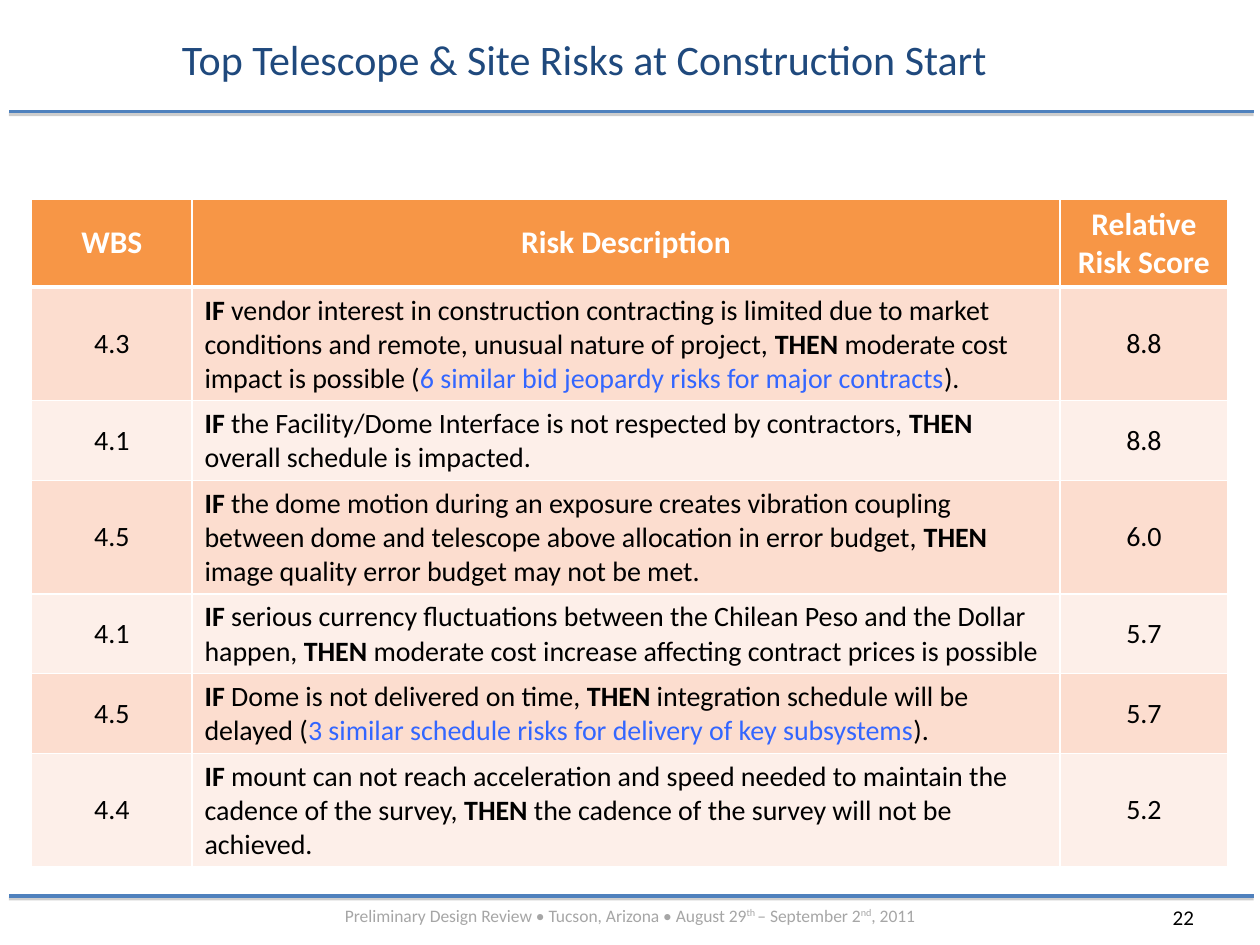
from typing import NamedTuple

from lxml.etree import SubElement as Sub
from pptx import Presentation
from pptx.dml.color import RGBColor as Rgb
from pptx.enum.shapes import MSO_CONNECTOR as Link
from pptx.enum.text import MSO_ANCHOR as Anchor, MSO_AUTO_SIZE as Fit, PP_ALIGN as Align
from pptx.oxml import parse_xml
from pptx.oxml.ns import nsdecls, qn
from pptx.util import Cm, Pt

FACE = "Calibri"
BLACK, WHITE, GREY = "000000", "FFFFFF", "A6A6A6"
BLUE, NAVY, LINK = "4F81BD", "1F497D", "3366FF"
ORANGE, BANDS = "F79646", ("FCDDCF", "FDEFE9")


class Bit(NamedTuple):
    text: str
    color: str = BLACK
    bold: bool = False
    raised: bool = False


class Risk(NamedTuple):
    code: str
    cause: str
    effect: str
    score: str
    note: str = ""


class Label(NamedTuple):
    left: float
    top: float
    width: float
    height: float
    size: int
    align: Align
    bits: list


HEADS = ("WBS", "Risk Description", "Relative Risk Score")
WIDTHS = (3.23, 17.5, 3.38)
RULES = (2.25, 18.06)

RISKS = [
    Risk("4.3", "vendor interest in construction contracting is limited due to market "
         "conditions and remote, unusual nature of project",
         "moderate cost impact is possible", "8.8",
         "6 similar bid jeopardy risks for major contracts"),
    Risk("4.1", "the Facility/Dome Interface is not respected by contractors",
         "overall schedule is impacted.", "8.8"),
    Risk("4.5", "the dome motion during an exposure creates vibration coupling between "
         "dome and telescope above allocation in error budget",
         "image quality error budget may not be met.", "6.0"),
    Risk("4.1", "serious currency fluctuations between the Chilean Peso and the Dollar happen",
         "moderate cost increase affecting contract prices is possible", "5.7"),
    Risk("4.5", "Dome is not delivered on time", "integration schedule will be delayed", "5.7",
         "3 similar schedule risks for delivery of key subsystems"),
    Risk("4.4", "mount can not reach acceleration and speed needed to maintain the "
         "cadence of the survey",
         "the cadence of the survey will not be achieved.", "5.2"),
]

LABELS = [
    Label(23.39, 18.11, 1.57, 0.76, 12, Align.LEFT, [Bit("22")]),
    Label(1.27, 18.11, 22.86, 0.69, 10, Align.CENTER, [
        Bit("Preliminary Design Review • Tucson, Arizona • August 29", GREY),
        Bit("th ", GREY, raised=True),
        Bit("– September 2", GREY),
        Bit("nd", GREY, raised=True),
        Bit(", 2011", GREY),
    ]),
]


def paint(color: str) -> Rgb:
    return Rgb.from_string(color)


def write(frame, bits: list, size: int, align: Align) -> None:
    para = frame.paragraphs[0]
    para.alignment = align
    for bit in bits:
        run = para.add_run()
        run.text = bit.text
        font = run.font
        font.name, font.size, font.bold = FACE, Pt(size), bit.bold
        font.color.rgb = paint(bit.color)
        if bit.raised:
            run._r.get_or_add_rPr().set("baseline", "30000")


def draw_rule(slide, top: float) -> None:
    rule = slide.shapes.add_connector(Link.STRAIGHT, Cm(25.27), Cm(top), Cm(0.18), Cm(top))
    rule.line.color.rgb = paint(BLUE)
    rule.line.width = Pt(2)
    rule._element.spPr.append(parse_xml(
        f'<a:effectLst {nsdecls("a")}><a:outerShdw blurRad="0" dist="20000" dir="5400000" '
        'rotWithShape="0"><a:srgbClr val="808080"><a:alpha val="38000"/></a:srgbClr>'
        '</a:outerShdw></a:effectLst>'))


def draw_label(slide, label: Label) -> None:
    box = slide.shapes.add_textbox(
        Cm(label.left), Cm(label.top), Cm(label.width), Cm(label.height))
    frame = box.text_frame
    frame.word_wrap = True
    frame.auto_size = Fit.SHAPE_TO_FIT_TEXT
    write(frame, label.bits, label.size, label.align)


def draw_title(slide, text: str) -> None:
    title = slide.shapes.title
    title.left, title.top = Cm(3.18), Cm(0.41)
    title.width, title.height = Cm(17.2), Cm(1.55)
    title.text_frame.vertical_anchor = Anchor.MIDDLE
    write(title.text_frame, [Bit(text, NAVY)], 24, Align.CENTER)


def fill_cell(cell, bits: list, back: str, size: int = 16, mid: bool = True) -> None:
    cell.fill.solid()
    cell.fill.fore_color.rgb = paint(back)
    cell.vertical_anchor = Anchor.MIDDLE if mid else Anchor.TOP
    write(cell.text_frame, bits, size, Align.CENTER if mid else Align.LEFT)


def edge_cell(cell) -> None:
    props = cell._tc.get_or_add_tcPr()
    for spot, (side, width) in enumerate((("L", 1), ("R", 1), ("T", 1), ("B", 3))):
        line = Sub(props, qn(f"a:ln{side}"), w=str(Pt(width)))
        Sub(Sub(line, qn("a:solidFill")), qn("a:srgbClr"), val=WHITE)
        props.insert(spot, line)


def phrase(risk: Risk) -> list:
    bits = [Bit("IF", bold=True), Bit(f" {risk.cause}, "), Bit("THEN", bold=True)]
    if risk.note:
        return bits + [Bit(f" {risk.effect} ("), Bit(risk.note, LINK), Bit(").")]
    return bits + [Bit(f" {risk.effect}")]


def draw_table(slide, risks: list) -> None:
    frame = slide.shapes.add_table(
        len(risks) + 1, len(HEADS), Cm(0.64), Cm(4.01), Cm(sum(WIDTHS)), Cm(13.46))
    table = frame.table
    for col, width in zip(table.columns, WIDTHS):
        col.width = Cm(width)
    for spot, row in enumerate(table.rows):
        row.height = Cm(1.04 if spot else 1.27)
    frame.height = Cm(13.46)
    for spot, head in enumerate(HEADS):
        cell = table.cell(0, spot)
        fill_cell(cell, [Bit(head, WHITE, True)], ORANGE, 18)
        edge_cell(cell)
    for spot, risk in enumerate(risks):
        back = BANDS[spot % 2]
        code, text, score = table.rows[spot + 1].cells
        fill_cell(code, [Bit(risk.code)], back)
        fill_cell(text, phrase(risk), back, mid=False)
        fill_cell(score, [Bit(risk.score)], back)


def main() -> None:
    deck = Presentation()
    deck.slide_width, deck.slide_height = Cm(25.4), Cm(19.05)
    slide = deck.slides.add_slide(deck.slide_layouts[5])
    for top in RULES:
        draw_rule(slide, top)
    for label in LABELS:
        draw_label(slide, label)
    draw_title(slide, "Top Telescope & Site Risks at Construction Start")
    draw_table(slide, RISKS)
    deck.save("out.pptx")


if __name__ == "__main__":
    main()
